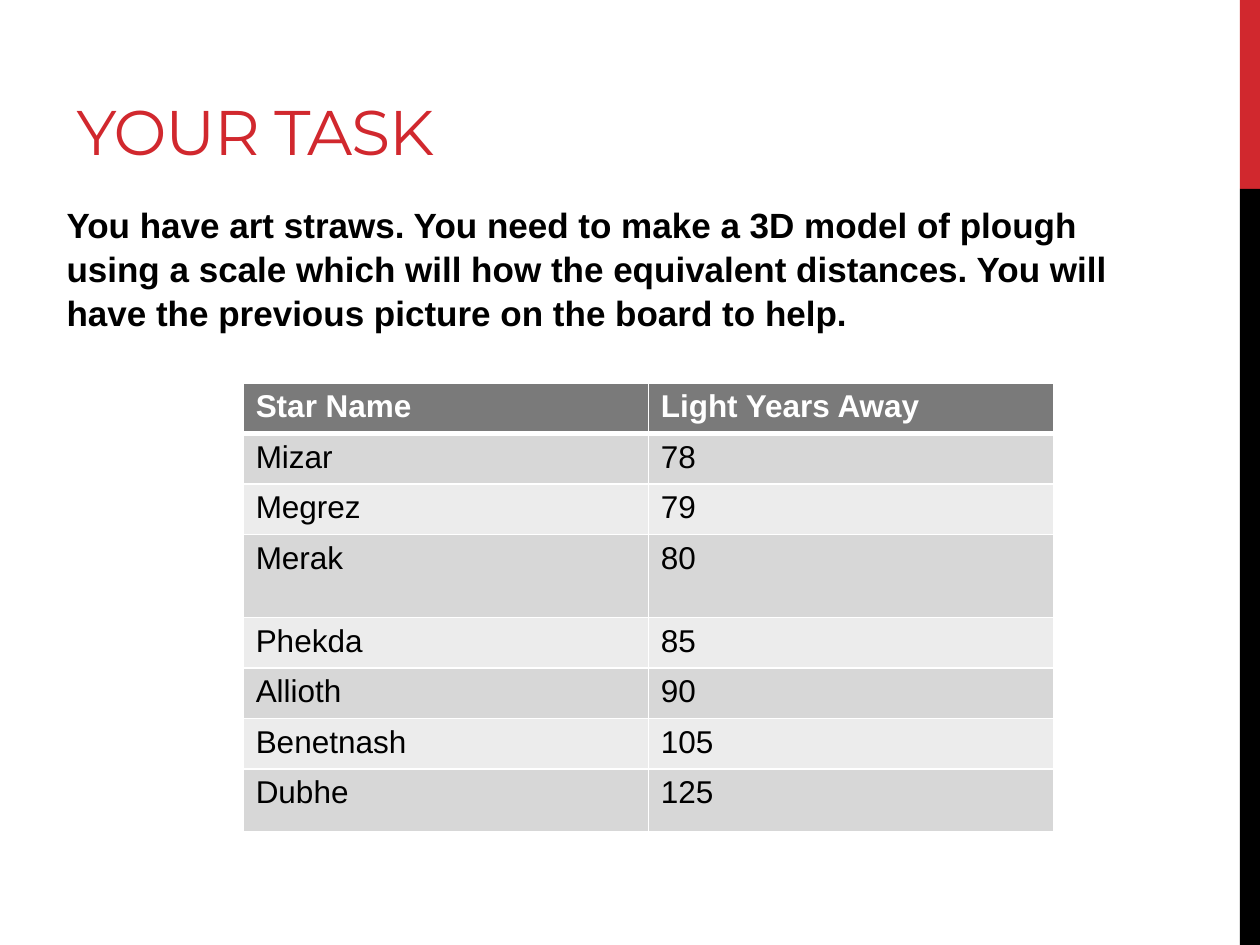
from lxml import etree
from pptx import Presentation
from pptx.dml.color import RGBColor
from pptx.enum.shapes import MSO_SHAPE
from pptx.enum.text import MSO_ANCHOR
from pptx.oxml.ns import qn
from pptx.util import Inches, Pt

RECT = MSO_SHAPE.RECTANGLE
TOP, BOTTOM = MSO_ANCHOR.TOP, MSO_ANCHOR.BOTTOM
RED, BLACK, WHITE = "D1282E", "000000", "FFFFFF"
HEADER, BANDS = "7A7A7A", ("ECECEC", "D7D7D7")

TITLE = {"name": "Montserrat", "size": Pt(36), "bold": False}
BODY = {"name": "Arial", "size": Pt(20), "bold": True}
HEAD_CELL = {"name": "Arial", "size": Pt(18), "bold": True}
CELL = {**HEAD_CELL, "bold": False}

TASK = (
    "You have art straws. You need to make a 3D model of plough using a scale "
    "which will how the equivalent distances. You will have the previous "
    "picture on the board to help."
)
STARS = [
    ("Star Name", "Light Years Away"),
    ("Mizar", "78"),
    ("Megrez", "79"),
    ("Merak", "80"),
    ("Phekda", "85"),
    ("Allioth", "90"),
    ("Benetnash", "105"),
    ("Dubhe", "125"),
]
ROW_HEIGHT = 0.38
TALL_ROWS = {3: 0.66, 7: 0.5}


def rgb(color):
    """Turn a hex string into a colour."""
    return RGBColor.from_string(color)


class SlideBuilder:
    """Holds the current slide and adds styled elements to it."""

    def __init__(self, s):
        """Keep the slide to draw on."""
        self.s = s

    def run(self, p, text, style, color):
        """Add a formatted run to a paragraph and return it."""
        r = p.add_run()
        r.text = text
        for name, value in style.items():
            setattr(r.font, name, value)
        r.font.color.rgb = rgb(color)
        return r

    def bar(self, box, color):
        """Add a plain filled rectangle."""
        sp = self.s.shapes.add_shape(RECT, *map(Inches, box))
        sp.shadow.inherit = False
        sp.fill.solid()
        sp.fill.fore_color.rgb = rgb(color)
        sp.line.fill.background()

    def text(self, box, text, style, color, anchor=TOP, spacing=1.0, tracking=0):
        """Add a wrapped text box with one paragraph."""
        tf = self.s.shapes.add_textbox(*map(Inches, box)).text_frame
        tf.word_wrap = True
        tf.vertical_anchor = anchor
        p = tf.paragraphs[0]
        p.line_spacing = spacing
        r = self.run(p, text, style, color)
        if tracking:
            r._r.get_or_add_rPr().set("spc", str(round(tracking * 100)))

    def border(self, cell, side, width):
        """Draw a white line on one side of a cell."""
        tc_pr = cell._tc.get_or_add_tcPr()
        ln = etree.SubElement(tc_pr, qn(f"a:ln{side}"), w=str(Pt(width)))
        fill = etree.SubElement(ln, qn("a:solidFill"))
        etree.SubElement(fill, qn("a:srgbClr"), val=WHITE)

    def table(self, box, rows, heights):
        """Add a table with a dark header and banded rows."""
        shape = self.s.shapes.add_table(len(rows), len(rows[0]), *map(Inches, box))
        table = shape.table
        for i, values in enumerate(rows):
            table.rows[i].height = Inches(heights[i])
            style, color, fill = CELL, BLACK, BANDS[i % 2]
            if i == 0:
                style, color, fill = HEAD_CELL, WHITE, HEADER
            widths = {"L": 1, "R": 1, "T": 3 if i == 1 else 1, "B": 3 if i == 0 else 1}
            for j, value in enumerate(values):
                cell = table.cell(i, j)
                for side, width in widths.items():
                    self.border(cell, side, width)
                cell.fill.solid()
                cell.fill.fore_color.rgb = rgb(fill)
                self.run(cell.text_frame.paragraphs[0], value, style, color)


def main():
    """Build and save the slide."""
    prs = Presentation()
    prs.slide_width, prs.slide_height = Inches(10), Inches(7.5)
    slide = SlideBuilder(prs.slides.add_slide(prs.slide_layouts[6]))
    slide.bar((9.84, 0, 0.16, 1.5), RED)
    slide.bar((9.84, 1.5, 0.16, 6), BLACK)
    slide.text((0.51, 0.13, 9, 1.25), "YOUR TASK", TITLE, RED, BOTTOM, tracking=-0.6)
    slide.text((0.43, 1.55, 9, 4.95), TASK, BODY, BLACK, spacing=1.05)
    heights = [TALL_ROWS.get(i, ROW_HEIGHT) for i in range(len(STARS))]
    slide.table((1.93, 3.04, 6.43, sum(heights)), STARS, heights)
    prs.save("out.pptx")


if __name__ == "__main__":
    main()
